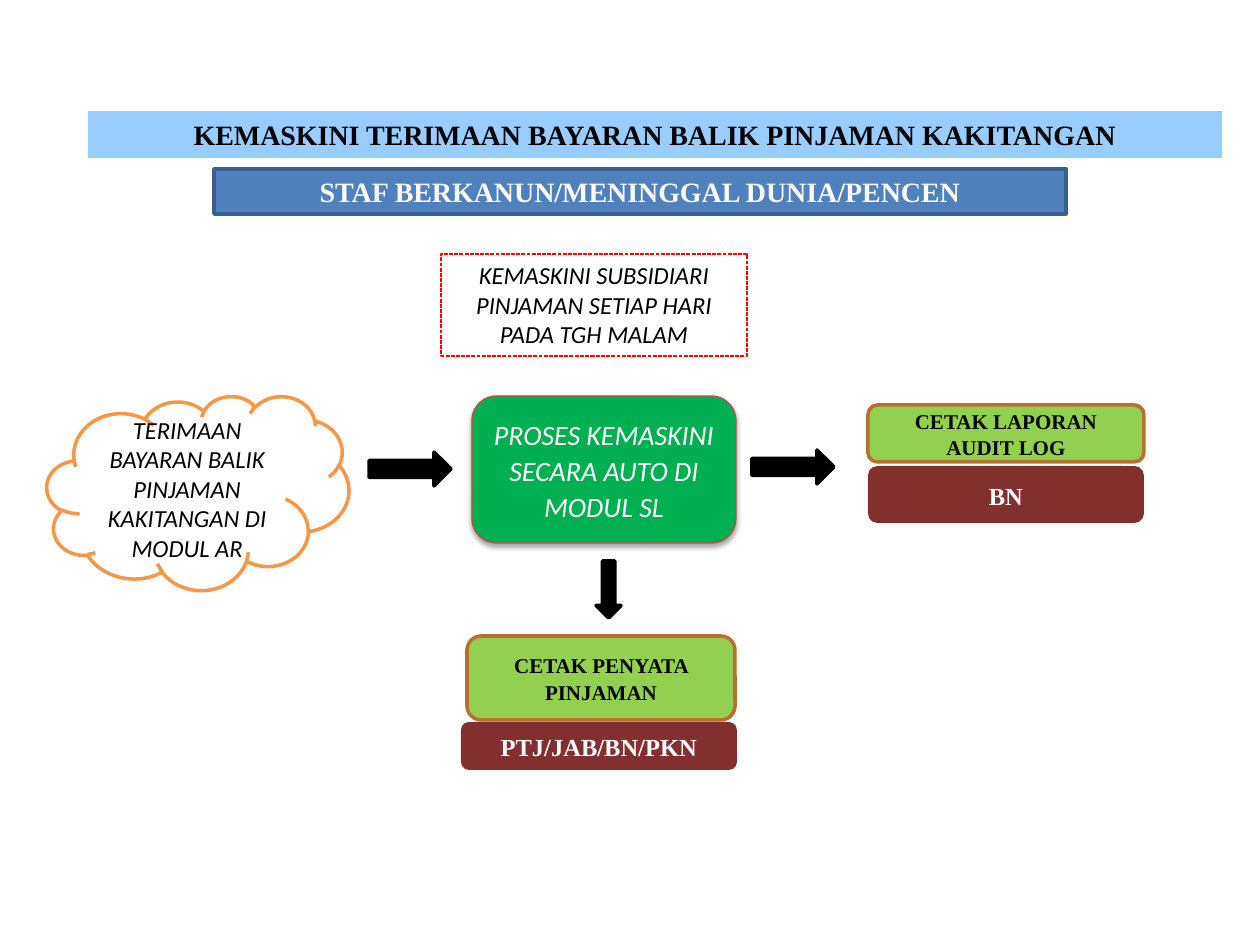
from lxml import etree
from pptx import Presentation, util as u
from pptx.dml.color import RGBColor
from pptx.enum import dml, shapes, text
from pptx.oxml.ns import qn

PX = 914400 / 126
SERIF, SANS = "Times New Roman", "Calibri"
BLACK, WHITE = "000000", "FFFFFF"
BOX = shapes.MSO_SHAPE.RECTANGLE
ROUNDED = shapes.MSO_SHAPE.ROUNDED_RECTANGLE


def px(value):
    return u.Emu(round(value * PX))


def color(hex_string):
    return RGBColor.from_string(hex_string)


def add_shape(slide, kind, bounds, fill=None, line=None, width=2):
    shape = slide.shapes.add_shape(kind, *map(px, bounds))
    shape.shadow.inherit = False
    if fill:
        shape.fill.solid()
        shape.fill.fore_color.rgb = color(fill)
    else:
        shape.fill.background()
    if line:
        shape.line.color.rgb = color(line)
        shape.line.width = u.Pt(width)
    else:
        shape.line.fill.background()
    return shape


def set_text(shape, words, size, font, ink, bold=False, italic=False,
             anchor=text.MSO_ANCHOR.MIDDLE, spacing=None):
    frame = shape.text_frame
    frame.word_wrap = True
    frame.vertical_anchor = anchor
    frame.text = words
    paragraph = frame.paragraphs[0]
    paragraph.alignment = text.PP_ALIGN.CENTER
    if spacing:
        paragraph.line_spacing = spacing
        paragraph.space_after = u.Pt(8)
    style = paragraph.runs[0].font
    style.size, style.name = u.Pt(size), font
    style.bold, style.italic = bold, italic
    style.color.rgb = color(ink)


def add_banner(slide, bounds, words, fill, ink, line=None):
    banner = add_shape(slide, BOX, bounds, fill, line)
    set_text(banner, words, 16, SERIF, ink, bold=True)


def add_report(slide, bounds, words):
    report = add_shape(slide, ROUNDED, bounds, "92D050", "B76F34")
    set_text(report, words, 12, SERIF, BLACK, bold=True, spacing=1.06)


def add_office(slide, bounds, words):
    office = add_shape(slide, ROUNDED, bounds, "82302E")
    set_text(office, words, 14, SERIF, WHITE, bold=True, spacing=1.06)


def add_arrow(slide, bounds, rotation=0):
    arrow = add_shape(slide, shapes.MSO_SHAPE.RIGHT_ARROW, bounds, BLACK, BLACK)
    arrow.rotation = rotation


def add_drop_shadow(shape):
    effects = shape._element.spPr.find(qn("a:effectLst"))
    shadow = etree.SubElement(effects, qn("a:outerShdw"), blurRad=str(u.Pt(3.1)),
                              dist=str(u.Pt(1.8)), dir="5400000", rotWithShape="0")
    tone = etree.SubElement(shadow, qn("a:srgbClr"), val=BLACK)
    etree.SubElement(tone, qn("a:alpha"), val="35000")


def add_process(slide):
    process = add_shape(slide, ROUNDED, (472, 396, 264, 147), "00B050", "BF4C48", 0.75)
    add_drop_shadow(process)
    set_text(process, "PROSES KEMASKINI SECARA AUTO DI MODUL SL", 16, SANS, WHITE,
             italic=True, spacing=1.07)


def add_schedule_note(slide):
    note = add_shape(slide, BOX, (441, 254, 306, 102), None, "FF0000", 0.75)
    note.line.dash_style = dml.MSO_LINE.SQUARE_DOT
    set_text(note, "KEMASKINI SUBSIDIARI PINJAMAN SETIAP HARI PADA TGH MALAM",
             14, SANS, BLACK, italic=True, anchor=text.MSO_ANCHOR.TOP)


def add_source_cloud(slide):
    cloud = add_shape(slide, shapes.MSO_SHAPE.CLOUD, (47, 396, 302, 194), WHITE, "F79646")
    set_text(cloud, "TERIMAAN BAYARAN BALIK PINJAMAN KAKITANGAN DI MODUL AR",
             14, SANS, BLACK, italic=True)


def main():
    presentation = Presentation()
    presentation.slide_width, presentation.slide_height = px(1260), px(945)
    slide = presentation.slides.add_slide(presentation.slide_layouts[6])

    add_banner(slide, (88, 111, 1134, 47),
               "KEMASKINI TERIMAAN BAYARAN BALIK PINJAMAN KAKITANGAN", "99CCFF", BLACK)
    add_banner(slide, (214, 169, 852, 45),
               "STAF BERKANUN/MENINGGAL DUNIA/PENCEN", "4F81BD", WHITE, "3A5F8C")
    add_schedule_note(slide)
    add_source_cloud(slide)
    add_process(slide)

    add_report(slide, (467, 636, 268, 84), "CETAK PENYATA PINJAMAN")
    add_office(slide, (461, 722, 276, 48), "PTJ/JAB/BN/PKN")
    add_report(slide, (868, 405, 276, 57), "CETAK LAPORAN AUDIT LOG")
    add_office(slide, (868, 466, 276, 57), "BN")

    add_arrow(slide, (369, 452, 82, 34))
    add_arrow(slide, (752, 450, 82, 34))
    add_arrow(slide, (580, 577, 57, 25), rotation=90)
    presentation.save("out.pptx")


if __name__ == "__main__":
    main()
